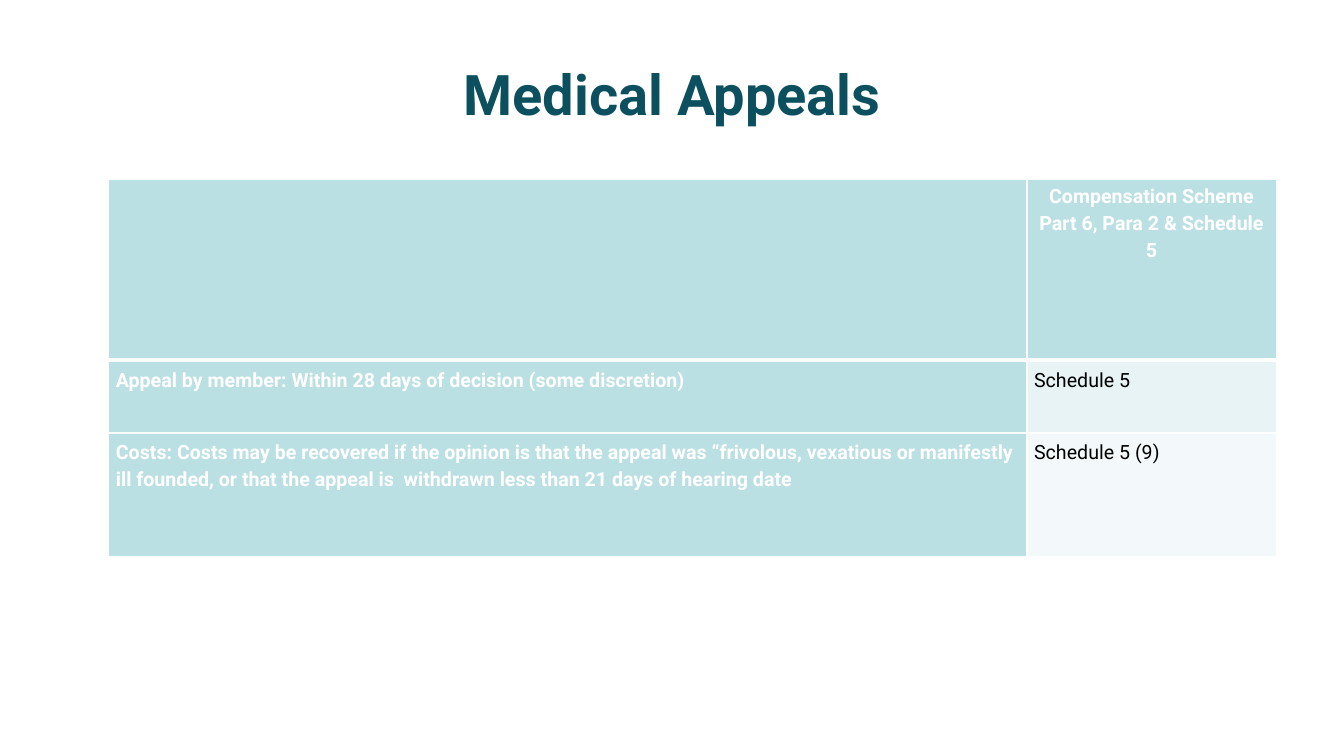
from lxml.etree import SubElement
from pptx import Presentation
from pptx.dml.color import RGBColor
from pptx.enum.text import MSO_ANCHOR, PP_ALIGN
from pptx.oxml.ns import qn
from pptx.util import Cm, Pt

FONT = "Roboto"
COLORS = {
    "title": "0C5060",
    "heading": "BBE0E3",
    "odd_row": "E7F3F4",
    "even_row": "F3F9FA",
    "white": "FFFFFF",
    "black": "000000",
}
COLUMN_WIDTHS = [23.14, 6.3]
ROW_HEIGHTS = [4.55, 1.83, 3.12]
APPEALS = [
    ["", "Compensation Scheme\nPart 6, Para 2 & Schedule 5"],
    ["Appeal by member: Within 28 days of decision (some discretion)", "Schedule 5"],
    ["Costs: Costs may be recovered if the opinion is that the appeal was “frivolous, "
     "vexatious or manifestly ill founded, or that the appeal is  withdrawn less than "
     "21 days of hearing date", "Schedule 5 (9)"],
]


def rgb(name):
    return RGBColor.from_string(COLORS[name])


def format_runs(paragraph, size, color, bold):
    for run in paragraph.runs:
        run.font.name = FONT
        run.font.size = Pt(size)
        run.font.bold = bold
        run.font.color.rgb = rgb(color)


def add_title(slide, wording):
    title = slide.shapes.add_textbox(Cm(1.7), Cm(0.76), Cm(30.48), Cm(3.18))
    frame = title.text_frame
    frame.word_wrap = True
    frame.vertical_anchor = MSO_ANCHOR.MIDDLE
    frame.text = wording
    heading = frame.paragraphs[0]
    heading.alignment = PP_ALIGN.CENTER
    format_runs(heading, 40, "title", True)


def set_borders(cell, widths):
    properties = cell._tc.get_or_add_tcPr()
    for side, width in widths.items():
        border = SubElement(properties, qn(f"a:ln{side}"), w=str(Pt(width)))
        fill = SubElement(border, qn("a:solidFill"))
        SubElement(fill, qn("a:srgbClr"), val=COLORS["white"])


def fill_cell(cell, wording, row, column):
    is_heading = row == 0 or column == 0
    top = 3 if row == 1 else 1
    bottom = 3 if row == 0 else 1
    set_borders(cell, {"L": 1, "R": 1, "T": top, "B": bottom})
    cell.fill.solid()
    background = "heading" if is_heading else "odd_row" if row % 2 else "even_row"
    cell.fill.fore_color.rgb = rgb(background)
    cell.margin_left, cell.margin_top = Cm(0.18), Cm(0.13)
    cell.margin_right, cell.margin_bottom = Cm(0.2), Cm(0)
    cell.text_frame.text = wording
    for paragraph in cell.text_frame.paragraphs:
        paragraph.alignment = PP_ALIGN.CENTER if row == 0 else PP_ALIGN.LEFT
        paragraph.line_spacing = 1.15
        format_runs(paragraph, 14, "white" if is_heading else "black", is_heading)
    if row == 0 and wording:
        scheme = cell.text_frame.paragraphs[0]
        scheme.line_spacing = 1.01
        scheme.space_after = Pt(0.6)


def add_appeals_table(slide):
    table = slide.shapes.add_table(
        len(ROW_HEIGHTS), len(COLUMN_WIDTHS), Cm(2.74), Cm(4.53),
        Cm(sum(COLUMN_WIDTHS)), Cm(sum(ROW_HEIGHTS))).table
    for column, width in zip(table.columns, COLUMN_WIDTHS):
        column.width = Cm(width)
    for row, height in zip(table.rows, ROW_HEIGHTS):
        row.height = Cm(height)
    for row, wordings in enumerate(APPEALS):
        for column, wording in enumerate(wordings):
            fill_cell(table.cell(row, column), wording, row, column)


def main():
    presentation = Presentation()
    presentation.slide_width = Cm(33.87)
    presentation.slide_height = Cm(19.05)
    slide = presentation.slides.add_slide(presentation.slide_layouts[6])
    add_title(slide, "Medical Appeals")
    add_appeals_table(slide)
    presentation.save("out.pptx")


if __name__ == "__main__":
    main()
